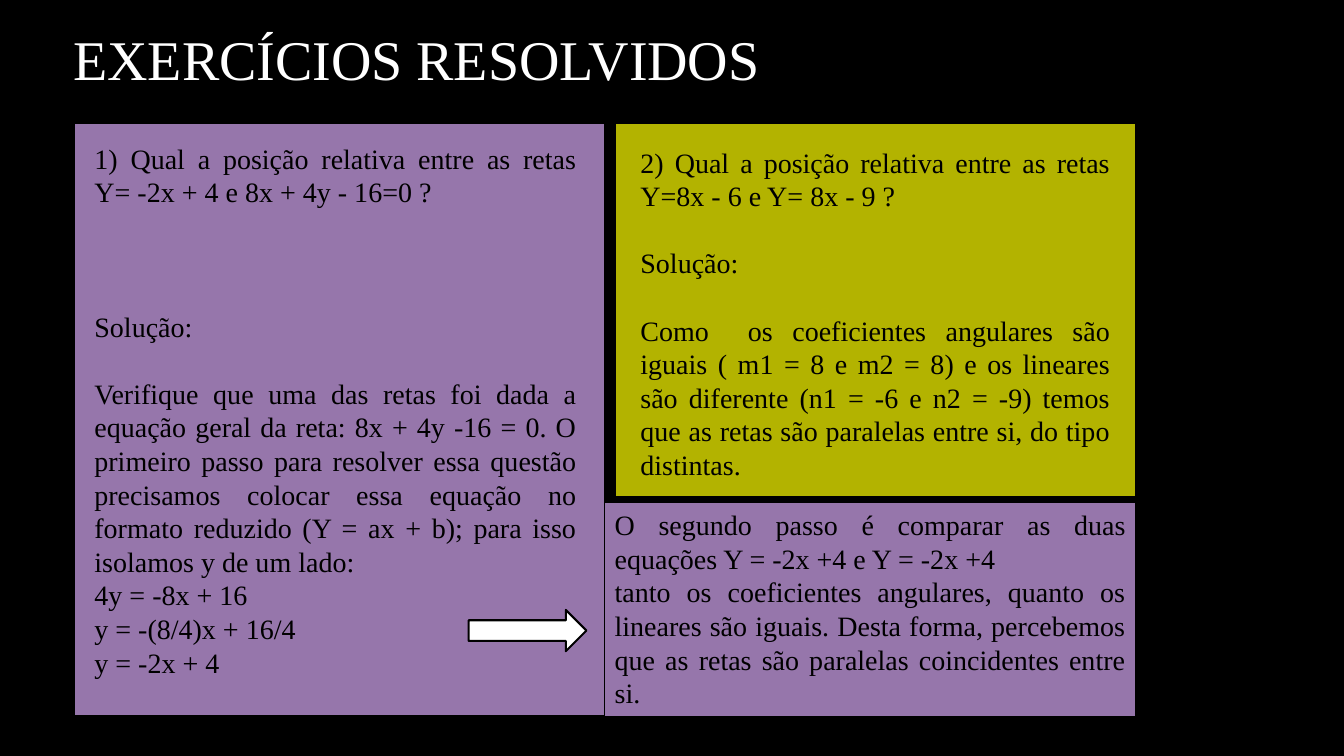
from dataclasses import dataclass

from lxml.etree import SubElement
from pptx import Presentation
from pptx.dml.color import RGBColor
from pptx.enum.shapes import MSO_SHAPE
from pptx.enum.text import MSO_ANCHOR, PP_ALIGN
from pptx.oxml.ns import qn
from pptx.util import Cm, Pt


@dataclass(frozen=True)
class Theme:
    font: str = "Times New Roman"
    title_size: int = 40
    body_size: int = 20
    line_pitch: int = 24
    black: RGBColor = RGBColor(0x00, 0x00, 0x00)
    white: RGBColor = RGBColor(0xFF, 0xFF, 0xFF)
    lilac: RGBColor = RGBColor(0xD7, 0xA9, 0xF5)
    yellow: RGBColor = RGBColor(0xFF, 0xFF, 0x00)
    panel_opacity: int = 70


THEME = Theme()

# Each paragraph: text and the number of lines left free above it
FIRST_EXERCISE = [
    ("1) Qual a posição relativa entre as retas Y= -2x + 4 e 8x + 4y - 16=0 ?", 0),
    ("Solução:", 3),
    ("Verifique que uma das retas foi dada a equação geral da reta: "
     "8x + 4y -16 = 0. O primeiro passo para resolver essa questão precisamos "
     "colocar essa equação no formato reduzido (Y = ax + b); para isso "
     "isolamos y de um lado:", 1),
    ("4y = -8x + 16", 0),
    ("y = -(8/4)x + 16/4", 0),
    ("y = -2x + 4", 0),
]
SECOND_STEP = [
    ("O segundo passo é comparar as duas equações Y = -2x +4 e Y = -2x +4", 0),
    ("tanto os coeficientes angulares, quanto os lineares são iguais. Desta "
     "forma, percebemos que as retas são paralelas coincidentes entre si.", 0),
]
SECOND_EXERCISE = [
    ("2) Qual a posição relativa entre as retas Y=8x - 6 e Y= 8x - 9 ?", 0),
    ("Solução:", 1),
    ("Como  os coeficientes angulares são iguais ( m1 = 8 e m2 = 8) e os "
     "lineares são diferente (n1 = -6 e n2 = -9) temos que as retas são "
     "paralelas entre si, do tipo distintas.", 1),
]


def add_run(paragraph, text, size, color):
    run = paragraph.add_run()
    run.text = text
    run.font.name = THEME.font
    run.font.size = Pt(size)
    run.font.color.rgb = color


def add_block(slide, preset, box, fill, line_width, opacity=100):
    """Place a filled and outlined preset shape."""
    shape = slide.shapes.add_shape(preset, *map(Cm, box))
    shape.shadow.inherit = False
    shape.fill.solid()
    shape.fill.fore_color.rgb = fill
    shape.line.color.rgb = THEME.black
    shape.line.width = Pt(line_width)
    if opacity < 100:
        color = shape.fill._xPr.find(qn("a:solidFill"))[0]
        SubElement(color, qn("a:alpha"), val=str(opacity * 1000))
    return shape


def write_paragraphs(text_frame, paragraphs):
    text_frame.word_wrap = True
    for index, (text, free_lines) in enumerate(paragraphs):
        paragraph = text_frame.add_paragraph() if index else text_frame.paragraphs[0]
        paragraph.alignment = PP_ALIGN.JUSTIFY
        paragraph.line_spacing = Pt(THEME.line_pitch)
        if free_lines:
            paragraph.space_before = Pt(free_lines * THEME.line_pitch)
        add_run(paragraph, text, THEME.body_size, THEME.black)


def add_title(slide, box, text):
    text_frame = slide.shapes.add_textbox(*map(Cm, box)).text_frame
    text_frame.word_wrap = True
    text_frame.vertical_anchor = MSO_ANCHOR.MIDDLE
    add_run(text_frame.paragraphs[0], text, THEME.title_size, THEME.white)


def add_exercise(slide, box, fill, inset, paragraphs):
    """Place a panel and its text, inset by (left, top, right)."""
    left, top, width, height = box
    inset_left, inset_top, inset_right = inset
    add_block(slide, MSO_SHAPE.RECTANGLE, box, fill, 1.5, THEME.panel_opacity)
    text_box = (left + inset_left, top + inset_top,
                width - inset_left - inset_right, height - inset_top)
    write_paragraphs(slide.shapes.add_textbox(*map(Cm, text_box)).text_frame, paragraphs)


def add_step(slide, box, paragraphs):
    """Place a panel that holds its own text."""
    shape = add_block(slide, MSO_SHAPE.RECTANGLE, box, THEME.lilac, 0.75,
                      THEME.panel_opacity)
    shape.text_frame.vertical_anchor = MSO_ANCHOR.TOP
    write_paragraphs(shape.text_frame, paragraphs)


def main():
    presentation = Presentation()
    presentation.slide_width, presentation.slide_height = Cm(33.87), Cm(19.05)
    slide = presentation.slides.add_slide(presentation.slide_layouts[6])
    slide.background.fill.solid()
    slide.background.fill.fore_color.rgb = THEME.black

    add_title(slide, (1.6, -0.08, 27.81, 3.07), "EXERCÍCIOS RESOLVIDOS")

    # First exercise, its second step and the arrow between them
    add_exercise(slide, (1.86, 3.1, 13.38, 14.95), THEME.lilac,
                 (0.27, 0.33, 0.46), FIRST_EXERCISE)
    add_step(slide, (15.24, 12.67, 13.38, 5.38), SECOND_STEP)

    # Second exercise
    add_exercise(slide, (15.49, 3.1, 13.13, 9.42), THEME.yellow,
                 (0.4, 0.43, 0.39), SECOND_EXERCISE)

    add_block(slide, MSO_SHAPE.RIGHT_ARROW, (11.81, 15.37, 2.97, 1.04), THEME.white, 1.5)

    presentation.save("out.pptx")


if __name__ == "__main__":
    main()
